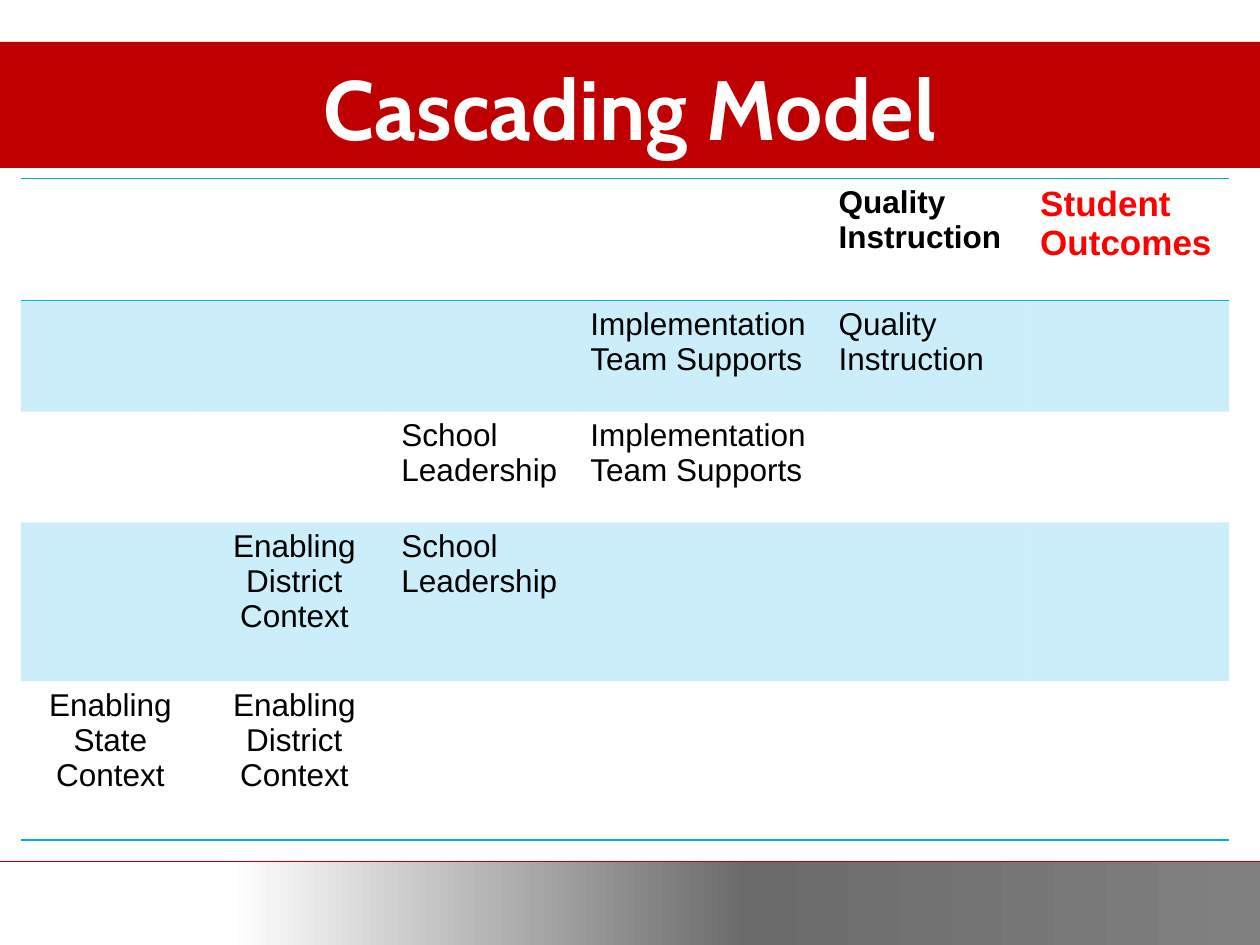
from copy import deepcopy

from lxml import etree
from pptx import Presentation
from pptx.dml.color import RGBColor
from pptx.enum.shapes import MSO_CONNECTOR, MSO_SHAPE
from pptx.enum.text import MSO_ANCHOR, PP_ALIGN
from pptx.oxml.ns import qn
from pptx.util import Pt

RECTANGLE = MSO_SHAPE.RECTANGLE
STRAIGHT = MSO_CONNECTOR.STRAIGHT
MIDDLE = MSO_ANCHOR.MIDDLE
LEFT, CENTER = PP_ALIGN.LEFT, PP_ALIGN.CENTER

RED, CYAN, WHITE, BLACK = "C00000", "00AEEF", "FFFFFF", "000000"
NO_GRID_STYLE = "{2D5ABB26-0587-4C30-8999-92F81FD0307C}"

COLUMN_WIDTHS = [102.24, 108, 108, 141.84, 115.2, 115.2]
ROW_HEIGHTS = [69.84, 63.36, 63.36, 90.72, 90.72]
TEAM = "Implementation Team Supports"
LEADERSHIP = "School Leadership"
INSTRUCTION = "Quality\nInstruction"
HEADING = {"bold": True}
CENTERED = {"align": CENTER}
CASCADE = {
    (0, 4): (INSTRUCTION, HEADING),
    (0, 5): ("Student Outcomes", {"bold": True, "size": 20, "color": "FF0000"}),
    (1, 3): (TEAM, {}),
    (1, 4): (INSTRUCTION, {}),
    (2, 2): (LEADERSHIP, {}),
    (2, 3): (TEAM, {}),
    (3, 1): ("Enabling\nDistrict\nContext", CENTERED),
    (3, 2): (LEADERSHIP, {}),
    (4, 0): ("Enabling State Context", CENTERED),
    (4, 1): ("Enabling District Context", CENTERED),
}


def rgb(value):
    return RGBColor.from_string(value)


def write(frame, text, font="Arial", size=18, color=BLACK, bold=False, align=LEFT):
    frame.word_wrap = True
    frame.text = text
    for paragraph in frame.paragraphs:
        paragraph.alignment = align
        paragraph.font.name = font
        paragraph.font.size = Pt(size)
        paragraph.font.bold = bold
        paragraph.font.color.rgb = rgb(color)


def add_band(slide, left, top, width, height):
    band = slide.shapes.add_shape(RECTANGLE, Pt(left), Pt(top), Pt(width), Pt(height))
    band.shadow.inherit = False
    band.line.fill.background()
    return band


def fill_gradient(band, colors):
    band.fill.gradient()
    band.fill.gradient_angle = 0
    stop_list = band._element.spPr.find(".//" + qn("a:gsLst"))
    while len(stop_list) < len(colors):
        stop_list.append(deepcopy(stop_list[0]))
    for index, (stop, color) in enumerate(zip(band.fill.gradient_stops, colors)):
        stop.position = index / (len(colors) - 1)
        stop.color.rgb = rgb(color)


def add_rule(slide, top, width):
    rule = slide.shapes.add_connector(STRAIGHT, 0, Pt(top), Pt(width), Pt(top))
    rule.line.color.rgb = rgb(RED)
    rule.line.width = Pt(0.25)
    etree.SubElement(rule._element.spPr, qn("a:effectLst"))


def add_title(slide, text):
    title = slide.shapes.add_textbox(Pt(20.88), Pt(18), Pt(678.24), Pt(85.68))
    title.text_frame.vertical_anchor = MIDDLE
    write(title.text_frame, text, font="Cabin", size=48, color=WHITE, bold=True, align=CENTER)


def set_borders(cell, sides):
    properties = cell._tc.get_or_add_tcPr()
    for index, side in enumerate(sides):
        border = etree.Element(qn("a:ln" + side), w=str(Pt(1)))
        fill = etree.SubElement(border, qn("a:solidFill"))
        etree.SubElement(fill, qn("a:srgbClr"), val=CYAN)
        properties.insert(index, border)


def shade(cell, opacity):
    cell.fill.solid()
    cell.fill.fore_color.rgb = rgb(CYAN)
    color = cell._tc.tcPr.find(".//" + qn("a:srgbClr"))
    etree.SubElement(color, qn("a:alpha"), val=str(opacity * 1000))


def add_cascade(slide):
    rows, columns = len(ROW_HEIGHTS), len(COLUMN_WIDTHS)
    frame = slide.shapes.add_table(
        rows, columns, Pt(12), Pt(102), Pt(sum(COLUMN_WIDTHS)), Pt(sum(ROW_HEIGHTS))
    )
    table = frame.table
    table.first_row = True
    table.horz_banding = True
    table._tbl.tblPr.find(qn("a:tableStyleId")).text = NO_GRID_STYLE
    for column, width in zip(table.columns, COLUMN_WIDTHS):
        column.width = Pt(width)
    for row, height in zip(table.rows, ROW_HEIGHTS):
        row.height = Pt(height)

    borders = {0: "TB", rows - 1: "B"}
    for row in range(rows):
        for column in range(columns):
            cell = table.cell(row, column)
            if row % 2:
                shade(cell, 20)
            else:
                cell.fill.background()
            set_borders(cell, borders.get(row, ""))
            if (row, column) in CASCADE:
                text, style = CASCADE[row, column]
                write(cell.text_frame, text, **style)


def main():
    presentation = Presentation()
    presentation.slide_width = Pt(720)
    presentation.slide_height = Pt(540)
    slide = presentation.slides.add_slide(presentation.slide_layouts[6])

    header = add_band(slide, 0, 24, 720, 72)
    header.fill.solid()
    header.fill.fore_color.rgb = rgb(RED)
    footer = add_band(slide, 132, 492, 588, 48)
    fill_gradient(footer, [WHITE, "6B6B6B", "808080"])
    add_rule(slide, 492, 720)
    add_title(slide, "Cascading Model")
    add_cascade(slide)

    presentation.save("out.pptx")


if __name__ == "__main__":
    main()
